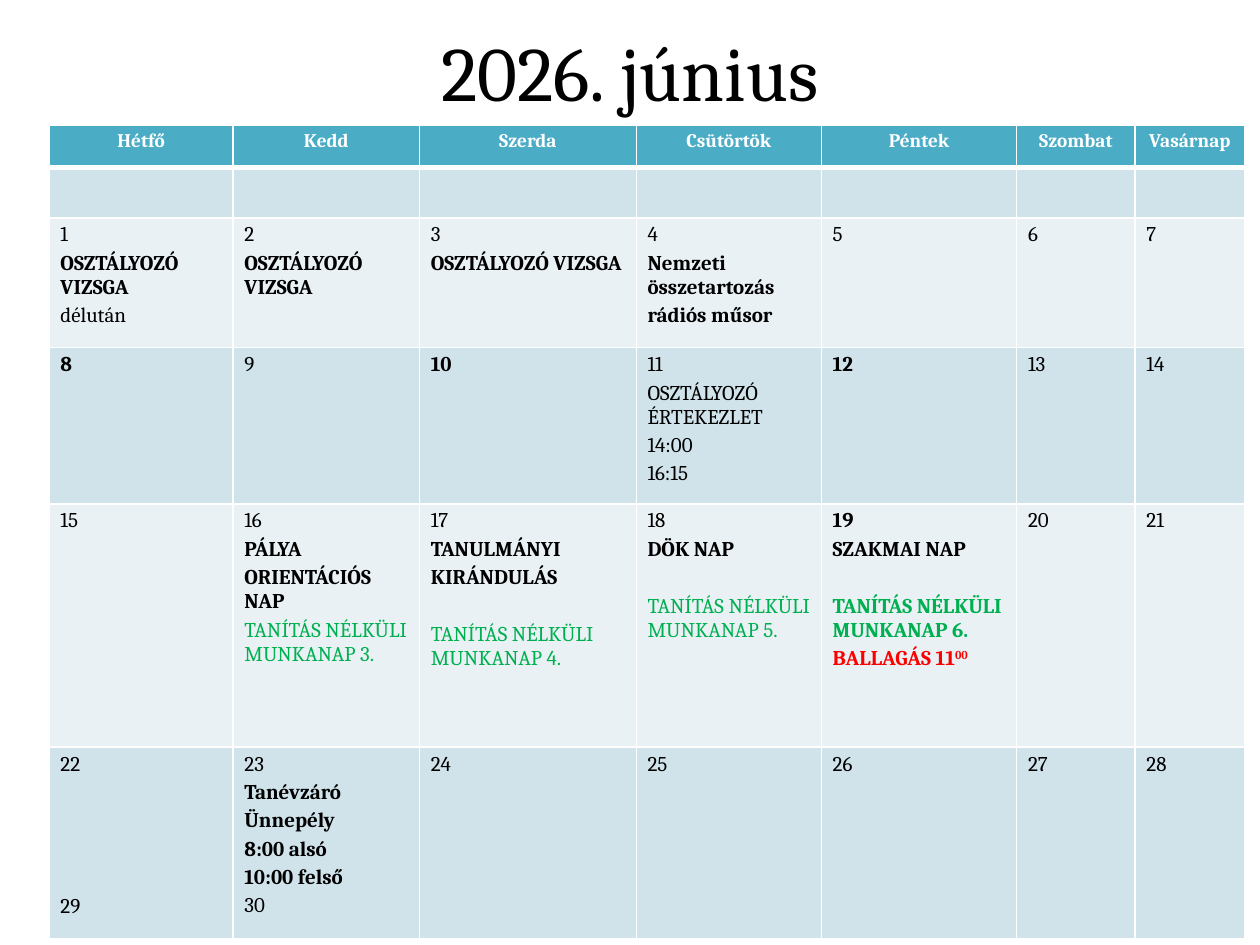
from lxml import etree
from pptx import Presentation
from pptx.dml.color import RGBColor
from pptx.oxml.ns import qn
from pptx.util import Inches, Pt
from pptx.enum import text

FONT = "Cambria"
BLACK, WHITE, GREEN, RED = "000000", "FFFFFF", "00B050", "FF0000"
HEADER_FILL, DARK_BAND, LIGHT_BAND = "4BACC6", "D0E3EA", "E9F1F5"
LINE_GAP = 2.4
SKIPPED_LINE = 16.3

WEEKDAYS = ["Hétfő", "Kedd", "Szerda", "Csütörtök", "Péntek", "Szombat", "Vasárnap"]
COLUMNS = [1.46, 1.48, 1.72, 1.47, 1.55, 0.94, 0.87]
ROWS = [0.34, 0.4, 1.03, 1.24, 1.93, 1.52]
BOLD_DAYS = {8, 10, 12, 19}


def note(words, bold=False, color=BLACK, skip=0, raised=""):
    return words, bold, color, skip, raised


EXAM = note("OSZTÁLYOZÓ VIZSGA", True)
EVENTS = {
    1: [EXAM, note("délután")],
    2: [EXAM],
    3: [EXAM],
    4: [note("Nemzeti összetartozás", True), note("rádiós műsor", True)],
    11: [note("OSZTÁLYOZÓ ÉRTEKEZLET"), note("14:00"), note("16:15")],
    16: [note("PÁLYA", True), note("ORIENTÁCIÓS NAP", True),
         note("TANÍTÁS NÉLKÜLI MUNKANAP 3.", color=GREEN)],
    17: [note("TANULMÁNYI", True), note("KIRÁNDULÁS", True),
         note("TANÍTÁS NÉLKÜLI MUNKANAP 4.", color=GREEN, skip=1)],
    18: [note("DÖK NAP", True),
         note("TANÍTÁS NÉLKÜLI MUNKANAP 5.", color=GREEN, skip=1)],
    19: [note("SZAKMAI NAP", True),
         note("TANÍTÁS NÉLKÜLI MUNKANAP 6.", True, GREEN, skip=1),
         note("BALLAGÁS 11", True, RED, raised="00")],
    22: [note("29", skip=4)],
    23: [note(words, True) for words in ("Tanévzáró", "Ünnepély", "8:00 alsó", "10:00 felső")]
        + [note("30")],
}


def rgb(value):
    return RGBColor.from_string(value)


def add_run(p, words, size, color, bold=False):
    r = p.add_run()
    r.text = words
    r.font.name = FONT
    r.font.size = Pt(size)
    r.font.bold = bold
    r.font.color.rgb = rgb(color)
    return r


def style_cell(cell, fill, top=1, bottom=1):
    cell.margin_left = cell.margin_right = Inches(0.09)
    cell.margin_top = cell.margin_bottom = Inches(0.04)
    tc_pr = cell._tc.get_or_add_tcPr()
    for side, width in (("L", 1), ("R", 1), ("T", top), ("B", bottom)):
        ln = etree.SubElement(tc_pr, qn(f"a:ln{side}"), w=str(Pt(width)))
        solid = etree.SubElement(ln, qn("a:solidFill"))
        etree.SubElement(solid, qn("a:srgbClr"), val=WHITE)
    cell.fill.solid()
    cell.fill.fore_color.rgb = rgb(fill)


def fill_day(cell, day):
    tf = cell.text_frame
    add_run(tf.paragraphs[0], str(day), 12, BLACK, day in BOLD_DAYS)
    for words, bold, color, skip, raised in EVENTS.get(day, []):
        p = tf.add_paragraph()
        p.space_before = Pt(LINE_GAP + skip * SKIPPED_LINE)
        add_run(p, words, 12, color, bold)
        if raised:
            r = add_run(p, raised, 12, color, bold)
            r._r.get_or_add_rPr().set("baseline", "30000")


def add_title(s, left, top, width, height):
    tf = s.shapes.add_textbox(left, top, width, height).text_frame
    tf.word_wrap = True
    tf.vertical_anchor = text.MSO_ANCHOR.MIDDLE
    p = tf.paragraphs[0]
    p.alignment = text.PP_ALIGN.CENTER
    add_run(p, "2026. június", 44, BLACK)


def add_calendar(s, left, top, width, height):
    table = s.shapes.add_table(len(ROWS), len(COLUMNS), left, top, width, height).table
    for column, share in zip(table.columns, COLUMNS):
        column.width = int(width * share / sum(COLUMNS))
    for row, share in zip(table.rows, ROWS):
        row.height = int(height * share / sum(ROWS))

    for i, weekday in enumerate(WEEKDAYS):
        header = table.cell(0, i)
        style_cell(header, HEADER_FILL, bottom=3)
        p = header.text_frame.paragraphs[0]
        p.alignment = text.PP_ALIGN.CENTER
        add_run(p, weekday, 11, WHITE, True)

        style_cell(table.cell(1, i), DARK_BAND, top=3)
        for week in range(2, len(ROWS)):
            cell = table.cell(week, i)
            style_cell(cell, DARK_BAND if week % 2 else LIGHT_BAND)
            fill_day(cell, (week - 2) * 7 + i + 1)


def main():
    prs = Presentation()
    prs.slide_width, prs.slide_height = Inches(10), Inches(7.5)
    s = prs.slides.add_slide(prs.slide_layouts[6])
    add_title(s, Inches(0.5), Inches(-0.42), Inches(9), Inches(1.97))
    add_calendar(s, Inches(0.39), Inches(0.99), Inches(9.49), Inches(6.46))
    prs.save("out.pptx")


if __name__ == "__main__":
    main()
